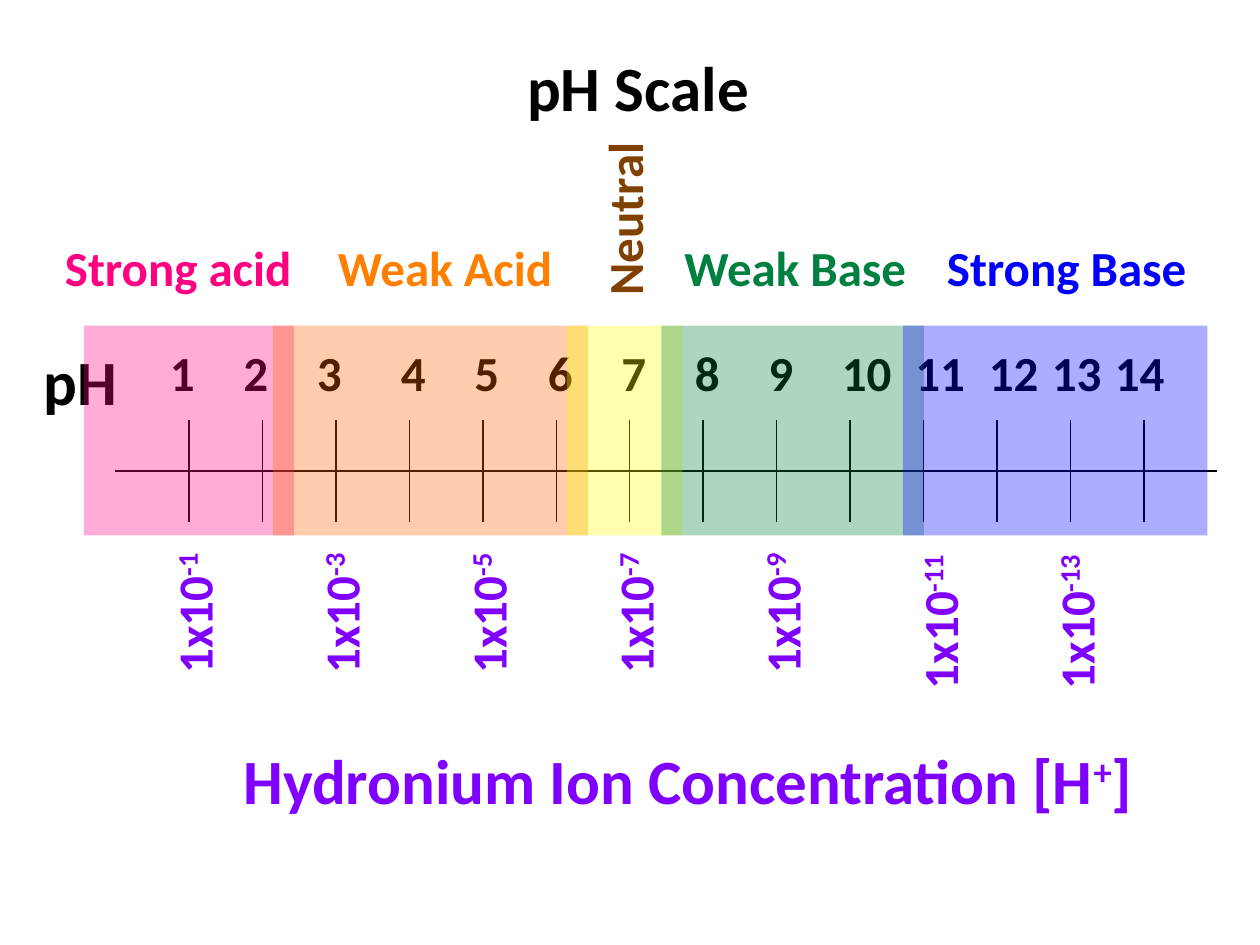
import pptx
import pptx.util
import pptx.dml.color
import pptx.enum.shapes
import pptx.enum.text
import pptx.oxml.ns
import lxml.etree

# Content; places are grid units, twelve to the inch
UNIT = 1 / 12
TITLE = "pH Scale"
TITLE_BOX = (49, 4, 34, 8.5)
PH_LEFTS = {1: 15, 2: 22, 3: 29, 4: 37, 5: 44, 6: 51, 7: 58,
            8: 65, 9: 72, 10: 79, 11: 86, 12: 93, 13: 99, 14: 105}
CONCENTRATION_LEFTS = {1: 15, 3: 29, 5: 43, 7: 57, 9: 71, 11: 86, 13: 99}
BANDS = [  # left, width, fill
    (8, 20, "FF0080"),
    (26, 30, "FF6600"),
    (54, 11, "FFFF00"),
    (63, 25, "008040"),
    (86, 29, "0000FF"),
]
BAND_LABELS = [  # text, left, width, colour
    ("Strong acid", 5, 24.4, "FF0080"),
    ("Weak Acid", 31, 23.3, "FF8000"),
    ("Weak Base", 64, 23.9, "008040"),
    ("Strong Base", 89, 25.6, "0000FF"),
]
BLACK, PURPLE, BROWN = "000000", "8000FF", "804000"
FONT, LARGE, MEDIUM = "Calibri", 36, 28
LARGE_HEIGHT, MEDIUM_HEIGHT = 8.5, 6.87
BAND_TOP, BAND_HEIGHT, BAND_ALPHA = 31, 20, 32
NUMBER_TOP, LABEL_TOP = 32, 22
COLUMNS, ROWS = 15, 2
SCALE_BOX = (11, 40, 7 * COLUMNS, 9.75)
PLAIN_TABLE = "{2D5ABB26-0587-4C30-8999-92F81FD0307C}"


def grid(*units):
    return [pptx.util.Inches(unit * UNIT) for unit in units]


def colour(value):
    return pptx.dml.color.RGBColor.from_string(value)


def write(shape, runs, size, text_colour, wrap):
    """Fill a shape with runs; a run that starts with ^ is raised."""
    frame = shape.text_frame
    settings = {
        "word_wrap": wrap,
        "auto_size": pptx.enum.text.MSO_AUTO_SIZE.SHAPE_TO_FIT_TEXT,
        "vertical_anchor": pptx.enum.text.MSO_ANCHOR.TOP,
    }
    for name, value in settings.items():
        setattr(frame, name, value)
    paragraph = frame.paragraphs[0]
    paragraph.alignment = pptx.enum.text.PP_ALIGN.LEFT
    paragraph.line_spacing = 1.0
    paragraph.space_before = pptx.util.Pt(0)
    for text in runs:
        run = paragraph.add_run()
        run.text = text.lstrip("^")
        style = {"name": FONT, "size": pptx.util.Pt(size), "bold": True}
        for name, value in style.items():
            setattr(run.font, name, value)
        run.font.color.rgb = colour(text_colour)
        if text.startswith("^"):
            run.font._element.set("baseline", "30000")


def add_text(slide, runs, box, size=MEDIUM, text_colour=BLACK, wrap=False):
    shape = slide.shapes.add_textbox(*grid(*box))
    write(shape, runs, size, text_colour, wrap)


def add_upright_text(slide, runs, left, top, length, text_colour, wrap=False):
    """Place text that reads upwards, by the corner it shows."""
    shift = (length - MEDIUM_HEIGHT) / 2
    box = (left - shift, top + shift, length, MEDIUM_HEIGHT)
    shape = slide.shapes.add_textbox(*grid(*box))
    shape.rotation = 270
    write(shape, runs, MEDIUM, text_colour, wrap)


def add_border(cell, side):
    properties = cell._tc.get_or_add_tcPr()
    make = lxml.etree.SubElement
    name = pptx.oxml.ns.qn
    line = make(properties, name("a:ln" + side), w="12700")
    fill = make(line, name("a:solidFill"))
    make(fill, name("a:srgbClr"), val=BLACK)


def add_scale(slide):
    """Inner table borders form the number line and its ticks."""
    table = slide.shapes.add_table(ROWS, COLUMNS, *grid(*SCALE_BOX)).table
    table.first_row = table.horz_banding = False
    table._tbl.tblPr.find(pptx.oxml.ns.qn("a:tableStyleId")).text = PLAIN_TABLE
    for row in range(ROWS):
        for column in range(COLUMNS):
            cell = table.cell(row, column)
            inner = {"L": column > 0, "R": column < COLUMNS - 1,
                     "T": row > 0, "B": row < ROWS - 1}
            for side, shown in inner.items():
                if shown:
                    add_border(cell, side)
            cell.fill.background()


def add_band(slide, left, width, fill):
    shape = slide.shapes.add_shape(
        pptx.enum.shapes.MSO_SHAPE.RECTANGLE,
        *grid(left, BAND_TOP, width, BAND_HEIGHT))
    shape.shadow.inherit = False
    shape.line.fill.background()
    shape.fill.solid()
    shape.fill.fore_color.rgb = colour(fill)
    tint = shape._element.spPr.find(".//" + pptx.oxml.ns.qn("a:srgbClr"))
    lxml.etree.SubElement(tint, pptx.oxml.ns.qn("a:alpha"),
                          val=str(BAND_ALPHA * 1000))


def main():
    presentation = pptx.Presentation()
    presentation.slide_width, presentation.slide_height = grid(120, 90)
    slide = presentation.slides.add_slide(presentation.slide_layouts[5])

    # Title
    title = slide.shapes.title
    title.left, title.top, title.width, title.height = grid(*TITLE_BOX)
    write(title, [TITLE], LARGE, BLACK, True)

    # Number line with its pH values
    add_scale(slide)
    add_text(slide, ["pH"], (3, NUMBER_TOP, 9.5, LARGE_HEIGHT), LARGE)
    for value, left in PH_LEFTS.items():
        width = 4.8 if value < 10 else 7.2
        add_text(slide, [str(value)], (left, NUMBER_TOP, width, MEDIUM_HEIGHT))

    # Hydronium concentrations
    add_text(slide, ["Hydronium Ion Concentration [H", "^+", "]"],
             (22, 70, 88.5, LARGE_HEIGHT), LARGE, PURPLE)
    for value, left in CONCENTRATION_LEFTS.items():
        length = 14.3 if value < 10 else 15.8
        add_upright_text(slide, ["1x10", f"^-{value}"], left, 51, length, PURPLE)

    # Translucent bands and their labels
    for band in BANDS:
        add_band(slide, *band)
    for text, left, width, text_colour in BAND_LABELS:
        add_text(slide, [text], (left, LABEL_TOP, width, MEDIUM_HEIGHT),
                 MEDIUM, text_colour, True)
    add_upright_text(slide, ["Neutral"], 56, 12, 17.3, BROWN, True)

    presentation.save("out.pptx")


if __name__ == "__main__":
    main()
